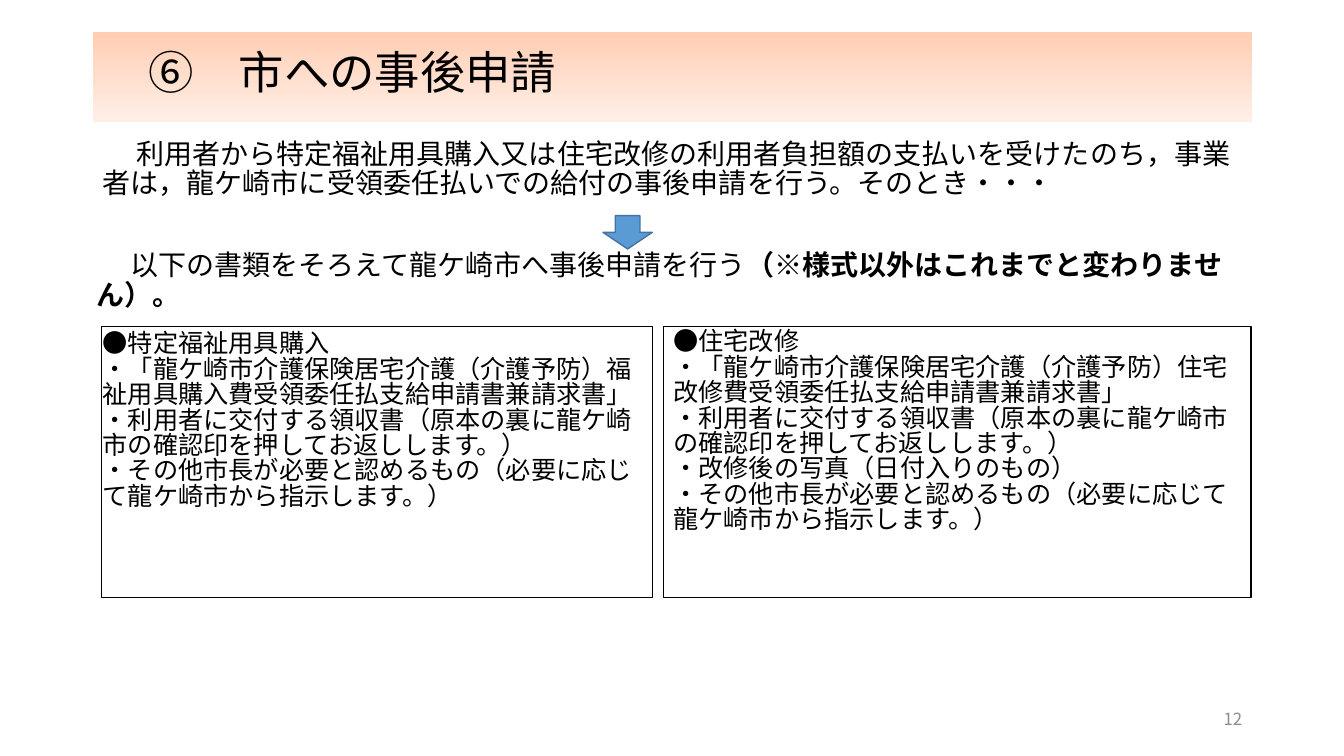
from lxml import etree
from pptx import Presentation
from pptx.dml.color import RGBColor
from pptx.enum.shapes import MSO_SHAPE
from pptx.enum.text import MSO_ANCHOR, PP_ALIGN
from pptx.oxml.ns import qn
from pptx.util import Inches, Pt

RECT, DOWN = MSO_SHAPE.RECTANGLE, MSO_SHAPE.DOWN_ARROW
TOP, MID = MSO_ANCHOR.TOP, MSO_ANCHOR.MIDDLE
LEFT, RIGHT = PP_ALIGN.LEFT, PP_ALIGN.RIGHT
FONT = "Noto Sans CJK JP"
HEX = {"ink": "000000", "page": "8C8C8C", "arrow": "5B9BD5", "edge": "43739E",
       "peach": "FFCEB3", "pale": "FFEFE7"}
RECEIPT = "・利用者に交付する領収書（原本の裏に龍ケ崎市の確認印を押してお返しします。）"
OTHER = "・その他市長が必要と認めるもの（必要に応じて龍ケ崎市から指示します。）"
GOODS = ["●特定福祉用具購入",
         "・「龍ケ崎市介護保険居宅介護（介護予防）福祉用具購入費受領委任払支給申請書兼請求書」",
         RECEIPT, OTHER]
HOME = ["●住宅改修",
        "・「龍ケ崎市介護保険居宅介護（介護予防）住宅改修費受領委任払支給申請書兼請求書」",
        RECEIPT, "・改修後の写真（日付入りのもの）", OTHER]


def tint(name):
    """Return the named colour."""
    return RGBColor.from_string(HEX[name])


def add_run(para, text, size, bold=False, color="ink"):
    """Add one run in the slide's font for Latin and Japanese."""
    run = para.add_run()
    run.text = text
    font = run.font
    font.name, font.size, font.bold = FONT, Pt(size), bold
    font.color.rgb = tint(color)
    mark = etree.Element(qn("a:ea"), typeface=FONT)
    run._r.rPr.find(qn("a:latin")).addnext(mark)


def write(frame, paras, anchor=TOP, align=LEFT, pitch=0.84):
    """Fill a frame with paragraphs, each a list of run settings."""
    frame.word_wrap = True
    frame.vertical_anchor = anchor
    for i, runs in enumerate(paras):
        para = frame.add_paragraph() if i else frame.paragraphs[0]
        para.alignment, para.line_spacing = align, pitch
        for run in runs:
            add_run(para, *run)


def add_text(slide, box, paras, **style):
    """Add a text box."""
    area = slide.shapes.add_textbox(*map(Inches, box))
    write(area.text_frame, paras, **style)


def add_form(slide, kind, box, fill=None, line=None):
    """Add a flat shape with an optional fill and line."""
    form = slide.shapes.add_shape(kind, *map(Inches, box))
    form.shadow.inherit = False
    if fill:
        form.fill.solid()
        form.fill.fore_color.rgb = tint(fill)
    else:
        form.fill.background()
    if line:
        form.line.color.rgb = tint(line)
        form.line.width = Pt(1)
    else:
        form.line.fill.background()
    return form


def add_title(slide, box, text):
    """Add the title band with its vertical gradient."""
    band = add_form(slide, RECT, box)
    band.fill.gradient()
    band.fill.gradient_angle = 270
    for stop, name in zip(band.fill.gradient_stops, ("peach", "pale")):
        stop.color.rgb = tint(name)
    for stop, place in zip(band.fill.gradient_stops, (0, 1)):
        stop.position = place
    write(band.text_frame, [[(text, 32.4)]], anchor=MID, pitch=0.75)


def add_list(slide, frame, box, lines):
    """Add an outlined box and the list of papers in it."""
    add_form(slide, RECT, frame, line="ink")
    add_text(slide, box, [[(line, 18)] for line in lines])


def main():
    """Build the slide and save it."""
    deck = Presentation()
    deck.slide_width, deck.slide_height = Inches(13.33), Inches(7.5)
    slide = deck.slides.add_slide(deck.slide_layouts[6])
    add_title(slide, (0.92, 0.32, 11.5, 0.89), "　⑥　市への事後申請")
    add_text(slide, (9.42, 6.95, 3, 0.4), [[("12", 12, False, "page")]],
             anchor=MID, align=RIGHT)
    add_text(slide, (0.92, 1.31, 11.5, 0.84), [[
        ("　", 24),
        ("利用者から特定福祉用具購入又は住宅改修の利用者負担額の支払いを受けたのち，"
         "事業者は，龍ケ崎市に受領委任払いでの給付の事後申請を行う。そのとき・・・", 20)]])
    add_text(slide, (0.86, 2.42, 11.5, 0.84), [[
        ("　", 24),
        ("以下の書類をそろえて龍ケ崎市へ事後申請を行う", 20),
        ("（※様式以外はこれまでと変わりません）。", 20, True)]])
    add_form(slide, DOWN, (5.98, 2.14, 0.49, 0.33), "arrow", "edge")
    add_list(slide, (1.01, 3.24, 5.46, 2.69), (0.92, 3.25, 5.55, 2.22), GOODS)
    add_list(slide, (6.58, 3.24, 5.83, 2.69), (6.58, 3.23, 5.83, 2.83), HOME)
    deck.save("out.pptx")


if __name__ == "__main__":
    main()
